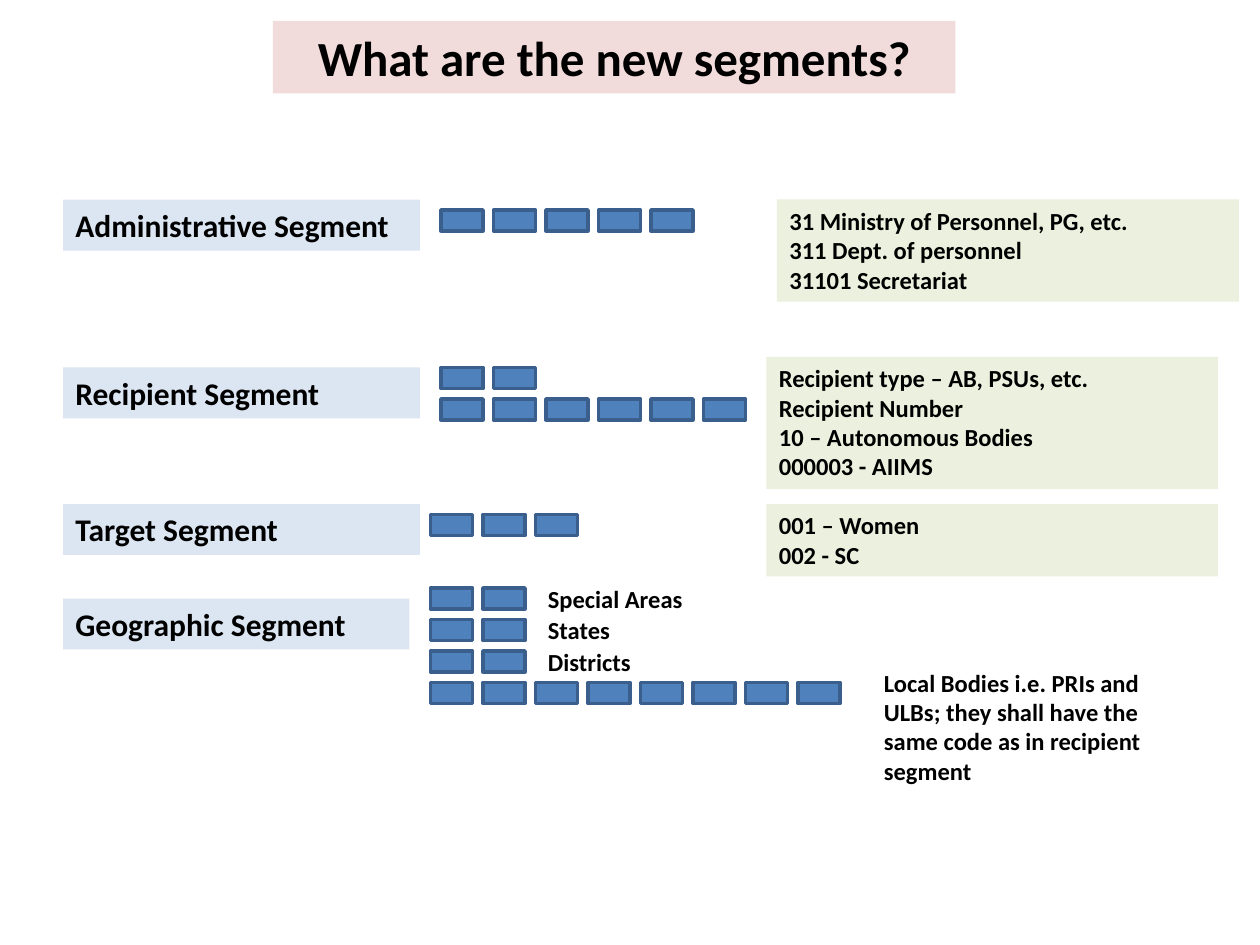
from pptx import Presentation
from pptx.dml.color import RGBColor
from pptx.enum.shapes import MSO_SHAPE
from pptx.enum.text import MSO_ANCHOR, MSO_AUTO_SIZE, PP_ALIGN
from pptx.util import Inches, Pt

BLACK = RGBColor(0x00, 0x00, 0x00)
PINK = RGBColor(0xF2, 0xDC, 0xDB)
PALE_BLUE = RGBColor(0xDC, 0xE6, 0xF2)
PALE_GREEN = RGBColor(0xEB, 0xF1, 0xDE)
DIGIT_BLUE = RGBColor(0x4F, 0x81, 0xBD)
DIGIT_EDGE = RGBColor(0x3A, 0x5F, 0x8C)

# Content: positions are (column, row) on a grid of 120 columns by 90 rows
TITLE = "What are the new segments?"
LABELS = [  # text, row, width in columns
    ("Administrative Segment", 19, 34),
    ("Recipient Segment", 35, 34),
    ("Target Segment", 48, 34),
    ("Geographic Segment", 57, 33),
]
DIGIT_ROWS = [  # first column, row, number of digits
    (42, 20, 5),
    (42, 35, 2), (42, 38, 6),
    (41, 49, 3),
    (41, 56, 2), (41, 59, 2), (41, 62, 2), (41, 65, 8),
]
EXAMPLES = [  # column, row, width, lines
    (74, 19, 44, ["31 Ministry of Personnel, PG, etc.", "311 Dept. of personnel",
                  "31101 Secretariat"]),
    (73, 34, 43, ["Recipient type – AB, PSUs, etc.", "Recipient Number",
                  "10 – Autonomous Bodies", "000003 - AIIMS"]),
    (73, 48, 43, ["001 – Women", "002 - SC"]),
]
CAPTIONS = [  # column, row, width, text, displayed lines
    (51, 55, 18, "Special Areas", 1),
    (51, 58, 16, "States", 1),
    (51, 61, 16, "Districts", 1),
    (83, 63, 32, "Local Bodies i.e. PRIs and ULBs; they shall have the same code "
                 "as in recipient segment", 4),
]

presentation = Presentation()
presentation.slide_width, presentation.slide_height = Inches(10), Inches(7.5)
slide = presentation.slides.add_slide(presentation.slide_layouts[6])
UNIT = presentation.slide_width / 120
DIGIT_WIDTH, DIGIT_HEIGHT, DIGIT_PITCH = 4, 2, 5
LINE_SPACING = 1.22


def grid(units):
    return round(units * UNIT)


def add_text(column, row, width, lines, size, fill=None, line_count=None,
             align=PP_ALIGN.LEFT):
    """Add a bold text box as tall as its lines, with an optional fill."""
    height = Inches(0.1) + Pt((line_count or len(lines)) * size * LINE_SPACING)
    box = slide.shapes.add_textbox(grid(column), grid(row), grid(width), height)
    if fill is not None:
        box.fill.solid()
        box.fill.fore_color.rgb = fill
    frame = box.text_frame
    frame.word_wrap = True
    frame.auto_size = MSO_AUTO_SIZE.SHAPE_TO_FIT_TEXT
    frame.vertical_anchor = MSO_ANCHOR.TOP
    frame.text = "\n".join(lines)
    for paragraph in frame.paragraphs:
        paragraph.alignment = align
        font = paragraph.runs[0].font
        font.name, font.size, font.bold = "Calibri", Pt(size), True
        font.color.rgb = BLACK


def add_digit(column, row):
    digit = slide.shapes.add_shape(MSO_SHAPE.RECTANGLE, grid(column), grid(row),
                                   grid(DIGIT_WIDTH), grid(DIGIT_HEIGHT))
    digit.shadow.inherit = False
    digit.fill.solid()
    digit.fill.fore_color.rgb = DIGIT_BLUE
    digit.line.color.rgb = DIGIT_EDGE
    digit.line.width = Pt(2)


# Title and segment names
add_text(26, 2, 65, [TITLE], 28, PINK, align=PP_ALIGN.CENTER)
for label, row, width in LABELS:
    add_text(6, row, width, [label], 18, PALE_BLUE)

# Code digits, one box each
for first_column, row, count in DIGIT_ROWS:
    for index in range(count):
        add_digit(first_column + index * DIGIT_PITCH, row)

# Example codes and captions
for column, row, width, lines in EXAMPLES:
    add_text(column, row, width, lines, 14, PALE_GREEN)
for column, row, width, caption, line_count in CAPTIONS:
    add_text(column, row, width, [caption], 14, line_count=line_count)

presentation.save("out.pptx")
